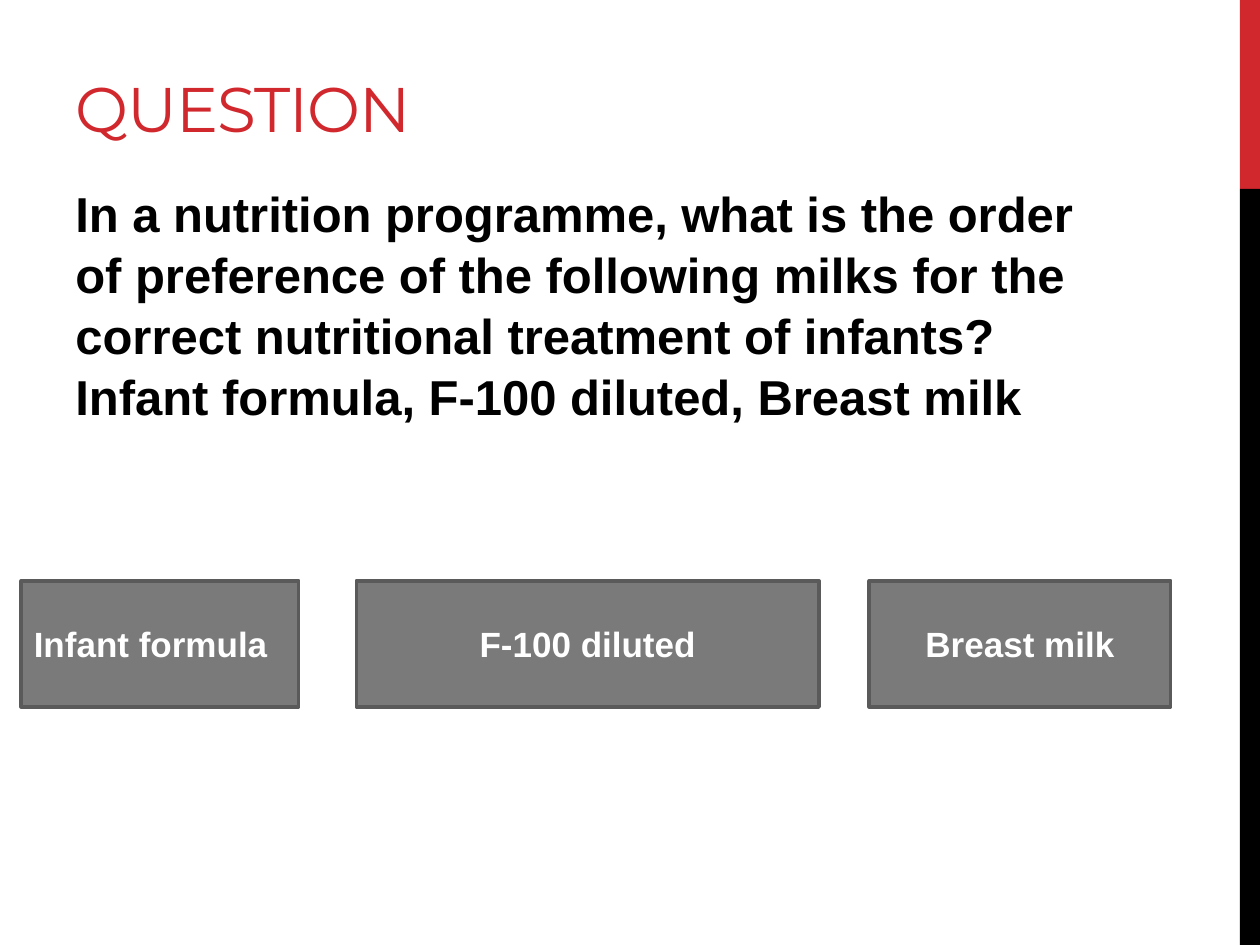
from pptx import Presentation
from pptx.dml.color import RGBColor
from pptx.enum.shapes import MSO_SHAPE
from pptx.enum.text import MSO_ANCHOR, PP_ALIGN
from pptx.util import Pt

RED = RGBColor(0xD1, 0x28, 0x2E)
BLACK = RGBColor(0, 0, 0)
WHITE = RGBColor(0xFF, 0xFF, 0xFF)
GREY = RGBColor(0x7A, 0x7A, 0x7A)
DARK_GREY = RGBColor(0x5A, 0x5A, 0x5A)
RECTANGLE = MSO_SHAPE.RECTANGLE
TOP, MIDDLE, BOTTOM = MSO_ANCHOR.TOP, MSO_ANCHOR.MIDDLE, MSO_ANCHOR.BOTTOM
LEFT, CENTER = PP_ALIGN.LEFT, PP_ALIGN.CENTER

PAGE_WIDTH, PAGE_HEIGHT = 720, 540
QUESTION = (
    "In a nutrition programme, what is the order of preference of the "
    "following milks for the correct nutritional treatment of infants? "
    "Infant formula, F-100 diluted, Breast milk"
)
MILKS = [  # label, left, width, alignment
    ("Infant formula", 12.24, 158.4, LEFT),
    ("F-100 diluted", 203.76, 264.24, CENTER),
    ("Breast milk", 496.8, 172.08, CENTER),
]


def write_text(shape, text, size, color, font="Arial", bold=False, align=LEFT,
               anchor=TOP, before=0, after=0, line_spacing=1.0, tracking=0):
    """Fill a shape with one paragraph; tracking is in points."""
    frame = shape.text_frame
    frame.word_wrap = True
    frame.vertical_anchor = anchor
    para = frame.paragraphs[0]
    para.alignment = align
    para.space_before, para.space_after = Pt(before), Pt(after)
    para.line_spacing = line_spacing
    span = para.add_run()
    span.text = text
    span.font.name = font
    span.font.size = Pt(size)
    span.font.bold = bold
    span.font.color.rgb = color
    if tracking:
        span._r.get_or_add_rPr().set("spc", str(round(tracking * 100)))


def add_rectangle(page, left, top, width, height, fill, line=None):
    box = page.shapes.add_shape(RECTANGLE, Pt(left), Pt(top), Pt(width), Pt(height))
    box.shadow.inherit = False
    box.fill.solid()
    box.fill.fore_color.rgb = fill
    if line is None:
        box.line.fill.background()
    else:
        box.line.color.rgb = line
        box.line.width = Pt(2.25)
    return box


def add_side_band(page, left, top, width, height):
    red_height = height / 5
    add_rectangle(page, left, top, width, red_height, RED)
    add_rectangle(page, left, top + red_height, width, height - red_height, BLACK)


def add_title(page, left, top, width, height):
    box = page.shapes.add_textbox(Pt(left), Pt(top), Pt(width), Pt(height))
    write_text(box, "QUESTION", 36, RED, font="Montserrat", anchor=BOTTOM,
               tracking=-0.6)


def add_question(page, left, top, width, height):
    box = page.shapes.add_textbox(Pt(left), Pt(top), Pt(width), Pt(height))
    write_text(box, QUESTION, 28, BLACK, bold=True, before=2, after=6,
               line_spacing=1.04)


def add_milk_boxes(page, top, height):
    for label, left, width, align in MILKS:
        box = add_rectangle(page, left, top, width, height, GREY, DARK_GREY)
        write_text(box, label, 20, WHITE, bold=True, align=align,
                   anchor=MIDDLE, after=6)


def main():
    deck = Presentation()
    deck.slide_width, deck.slide_height = Pt(PAGE_WIDTH), Pt(PAGE_HEIGHT)
    page = deck.slides.add_slide(deck.slide_layouts[6])
    add_side_band(page, 708.5, 0, 11.5, PAGE_HEIGHT)
    add_title(page, 36, 20.88, 456, 65.52)
    add_question(page, 36, 100, 600, 344)
    add_milk_boxes(page, 332, 72)
    deck.save("out.pptx")


if __name__ == "__main__":
    main()
